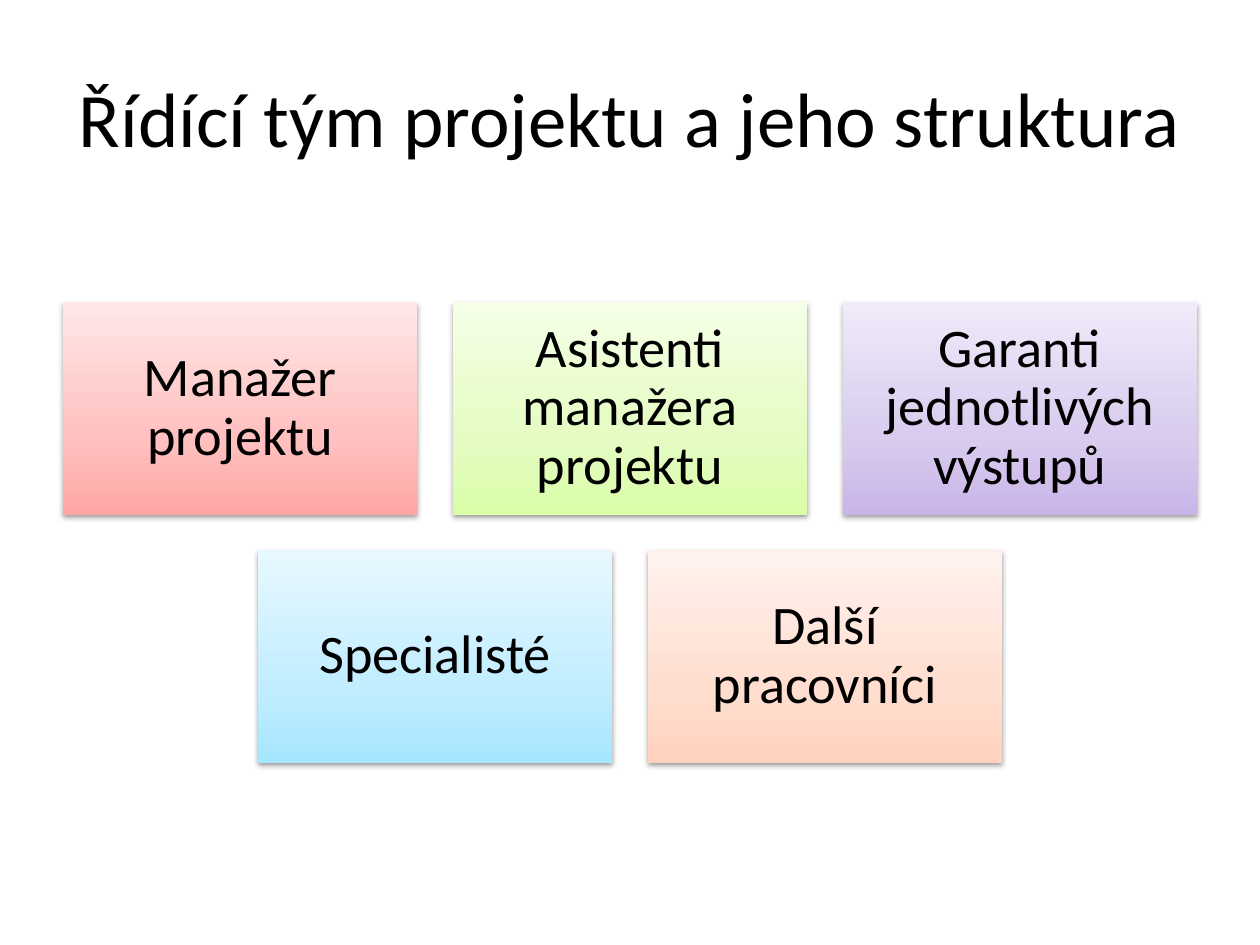
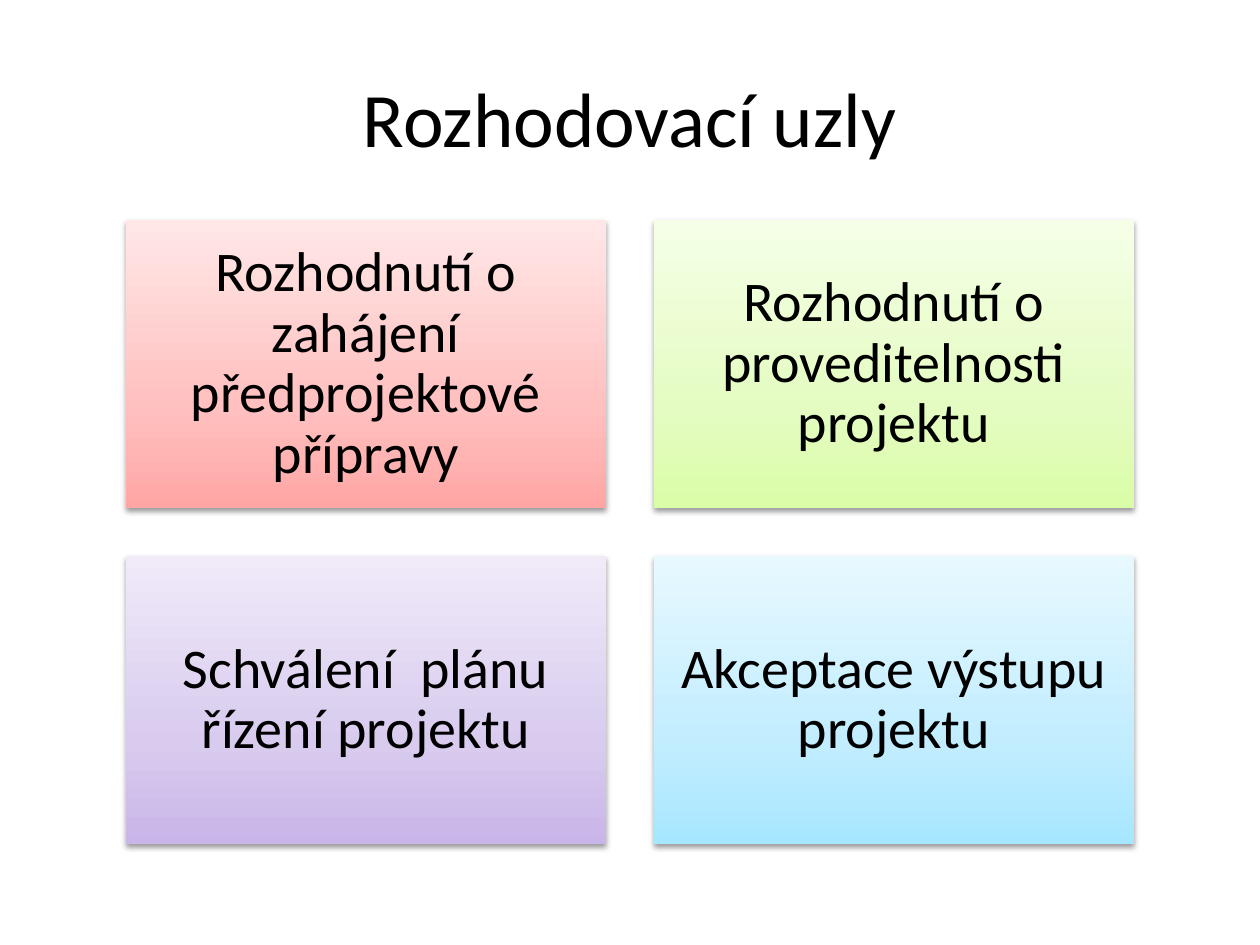
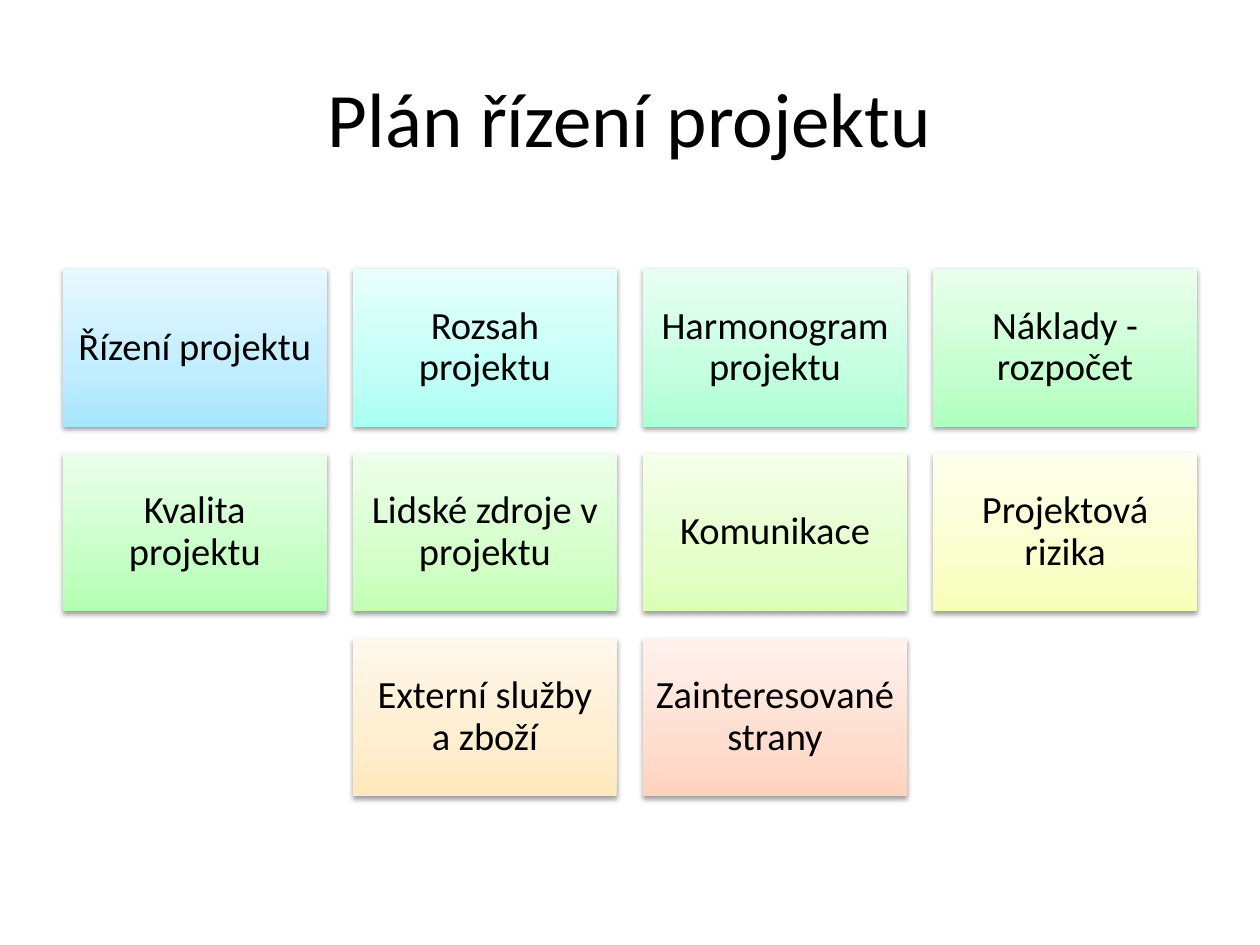
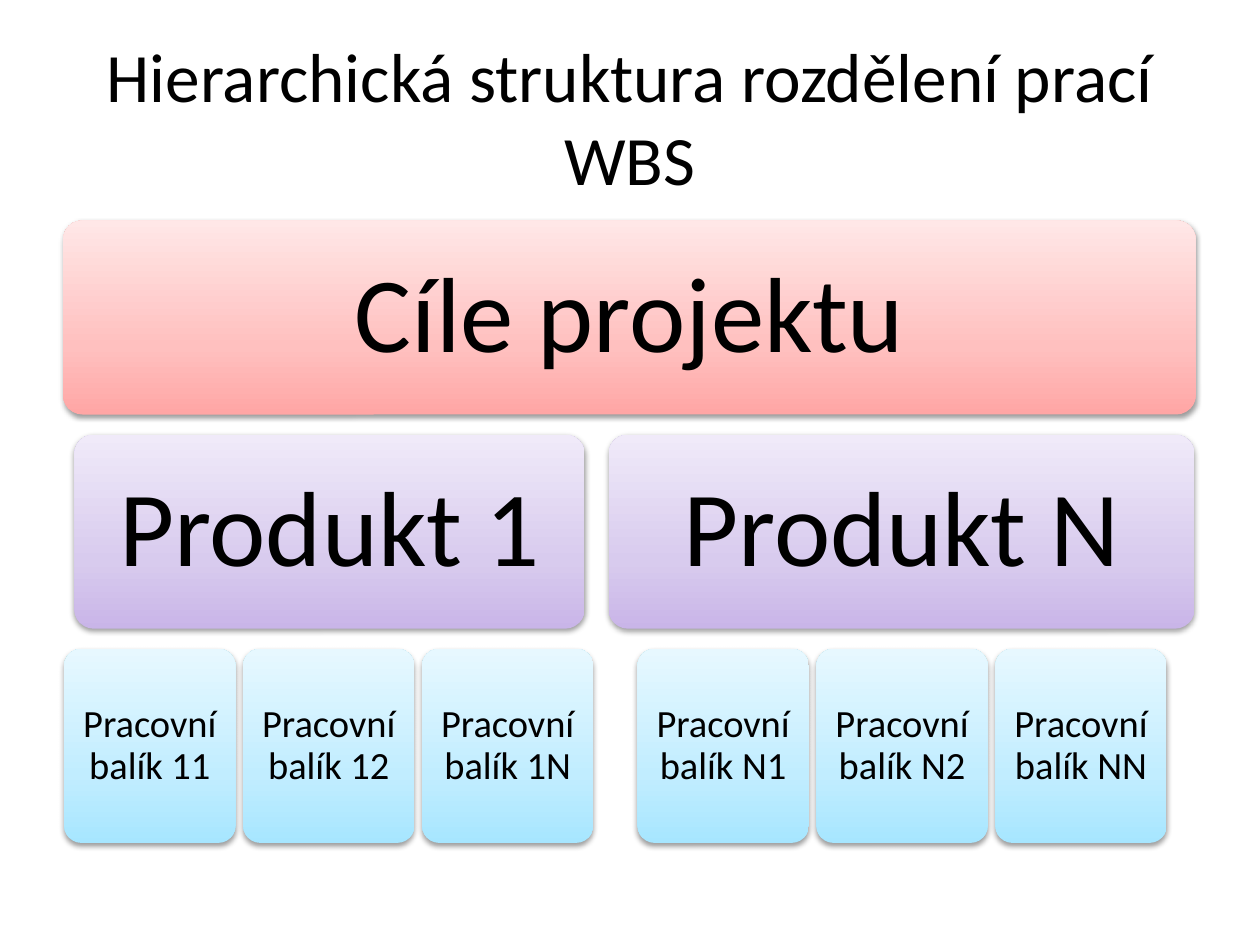
from copy import deepcopy
from dataclasses import dataclass
from pptx import Presentation
from pptx.dml.color import RGBColor as Color
from pptx.enum.shapes import MSO_SHAPE as Preset
from pptx.enum.text import MSO_ANCHOR as Anchor, PP_ALIGN as Align
from pptx.oxml import parse_xml
from pptx.oxml.ns import nsdecls, qn
from pptx.util import Inches, Pt


@dataclass(frozen=True)
class Theme:
    font: str = "Calibri"
    ink: str = "000000"
    title_size: float = 44
    long_title_size: float = 39.6
    role_size: float = 31
    decision_size: float = 32
    small_size: float = 22
    goal_size: float = 61
    red: tuple = ("FFA6A5", "FFC0BF", "FFE7E7")
    lime: tuple = ("DAFDA7", "E4FCC2", "F5FFE7")
    purple: tuple = ("C9B5E8", "D8CBEE", "F0EAF9")
    blue: tuple = ("A7E6FF", "C1EDFF", "E7F8FF")
    cyan: tuple = ("AAFFF3", "C2FFF7", "E8FFFC")
    aqua: tuple = ("ACFFD4", "C4FFE0", "E9FFF3")
    mint: tuple = ("AFFFBD", "C6FFD0", "E9FFED")
    green: tuple = ("B2FFB1", "C8FFC8", "EAFFEA")
    leaf: tuple = ("C3FFB3", "D4FFCA", "EEFFEB")
    pear: tuple = ("DBFFB6", "E5FFCB", "F5FFEB")
    yellow: tuple = ("F8FFB8", "FAFFCD", "FDFFEC")
    amber: tuple = ("FFE8BB", "FFEECF", "FFF8ED")
    orange: tuple = ("FFD2BD", "FFDED0", "FFF2ED")


THEME = Theme()
TINT_POSITIONS = (0, 0.35, 1)
CONTENT_TOP, CONTENT_HEIGHT = 1.75, 4.95
BAND_HEIGHT, BAND_PITCH = 1.54, 1.7


def set_format(target, values):
    for name, value in values.items():
        setattr(target, name, value)


def write_text(shape, text, size, inset=None, line_spacing=None):
    frame = shape.text_frame
    set_format(frame, {"word_wrap": True, "vertical_anchor": Anchor.MIDDLE})
    if inset is not None:
        sides = ("left", "top", "right", "bottom")
        set_format(frame, {f"margin_{side}": Inches(inset) for side in sides})
    para = frame.paragraphs[0]
    set_format(para, {"alignment": Align.CENTER, "line_spacing": line_spacing})
    span = para.add_run()
    span.text = text
    set_format(span.font, {"name": THEME.font, "size": Pt(size)})
    span.font.color.rgb = Color.from_string(THEME.ink)


def add_title_page(deck, title, size=THEME.title_size):
    page = deck.slides.add_slide(deck.slide_layouts[6])
    box = page.shapes.add_textbox(Inches(0.5), Inches(0.3), Inches(9), Inches(1.25))
    write_text(box, title, size)
    return page


def fill_tint(shape, tint):
    shape.fill.gradient()
    shape.fill.gradient_angle = 90
    stop_list = shape.fill.gradient_stops
    first_stop = shape._element.spPr.find(".//" + qn("a:gs"))
    first_stop.addnext(deepcopy(first_stop))
    stop_list = shape.fill.gradient_stops
    for stop, colour, position in zip(stop_list, tint, TINT_POSITIONS):
        stop.color.rgb = Color.from_string(colour)
        stop.position = position


def add_soft_shadow(shape):
    shape.shadow.inherit = False
    effects = shape._element.spPr.find(qn("a:effectLst"))
    effects.append(parse_xml(
        f'<a:outerShdw {nsdecls("a")} blurRad="40000" dist="20000" dir="5400000" rotWithShape="0">'
        f'<a:srgbClr val="{THEME.ink}"><a:alpha val="38000"/></a:srgbClr></a:outerShdw>'))


def add_card(page, text, tint, area, size, inset, preset=Preset.RECTANGLE):
    card = page.shapes.add_shape(preset, *map(Inches, area))
    if preset == Preset.ROUNDED_RECTANGLE:
        card.adjustments[0] = 0.1
    fill_tint(card, tint)
    card.line.fill.background()
    add_soft_shadow(card)
    write_text(card, text, size, inset, 0.9)


def add_card_grid(page, cards, columns, grid_width, size, inset):
    width = grid_width / (columns + 0.1 * (columns - 1))
    height, gap = 0.6 * width, 0.1 * width
    rows = [cards[start:start + columns] for start in range(0, len(cards), columns)]
    grid_height = len(rows) * (height + gap) - gap
    top = CONTENT_TOP + (CONTENT_HEIGHT - grid_height) / 2
    for row_index, row in enumerate(rows):
        left = (10 - len(row) * (width + gap) + gap) / 2
        for column, (text, tint) in enumerate(row):
            area = (left + column * (width + gap), top + row_index * (height + gap), width, height)
            add_card(page, text, tint, area, size, inset)


def add_level_card(page, level, text, left, width):
    tint, size, inset = (
        (THEME.red, THEME.goal_size, 0.25),
        (THEME.purple, THEME.goal_size, 0.25),
        (THEME.blue, THEME.small_size, 0.09),
    )[level]
    area = (left, CONTENT_TOP + level * BAND_PITCH, width, BAND_HEIGHT)
    add_card(page, text, tint, area, size, inset, Preset.ROUNDED_RECTANGLE)


def add_team_page(deck):
    page = add_title_page(deck, "Řídící tým projektu a jeho struktura")
    roles = [
        ("Manažer projektu", THEME.red),
        ("Asistenti manažera projektu", THEME.lime),
        ("Garanti jednotlivých výstupů", THEME.purple),
        ("Specialisté", THEME.blue),
        ("Další pracovníci", THEME.orange),
    ]
    add_card_grid(page, roles, 3, 9, THEME.role_size, 0.13)


def add_decisions_page(deck):
    page = add_title_page(deck, "Rozhodovací uzly")
    decisions = [
        ("Rozhodnutí o zahájení předprojektové přípravy", THEME.red),
        ("Rozhodnutí o proveditelnosti projektu", THEME.lime),
        ("Schválení  plánu řízení projektu", THEME.purple),
        ("Akceptace výstupu projektu", THEME.blue),
    ]
    add_card_grid(page, decisions, 2, 8, THEME.decision_size, 0.13)


def add_plan_page(deck):
    page = add_title_page(deck, "Plán řízení projektu")
    plan_parts = [
        ("Řízení projektu", THEME.blue),
        ("Rozsah projektu", THEME.cyan),
        ("Harmonogram projektu", THEME.aqua),
        ("Náklady - rozpočet", THEME.mint),
        ("Kvalita projektu", THEME.green),
        ("Lidské zdroje v projektu", THEME.leaf),
        ("Komunikace", THEME.pear),
        ("Projektová rizika", THEME.yellow),
        ("Externí služby a zboží", THEME.amber),
        ("Zainteresované strany", THEME.orange),
    ]
    add_card_grid(page, plan_parts, 4, 9, THEME.small_size, 0.09)


def add_breakdown_page(deck):
    page = add_title_page(deck, "Hierarchická struktura rozdělení prací WBS", THEME.long_title_size)
    add_level_card(page, 0, "Cíle projektu", 0.5, 8.99)
    products = [("1", 0.59, 4.05, 0.51, "12N"), ("N", 4.83, 4.65, 5.06, "12N")]
    for product, left, width, packages_left, packages in products:
        add_level_card(page, 1, f"Produkt {product}", left, width)
        for index, package_mark in enumerate(packages):
            label = f"Pracovní balík {product}{package_mark}"
            add_level_card(page, 2, label, packages_left + index * 1.42, 1.36)


def main():
    deck = Presentation()
    set_format(deck, {"slide_width": Inches(10), "slide_height": Inches(7.5)})
    add_team_page(deck)
    add_decisions_page(deck)
    add_plan_page(deck)
    add_breakdown_page(deck)
    deck.save("out.pptx")


if __name__ == "__main__":
    main()
